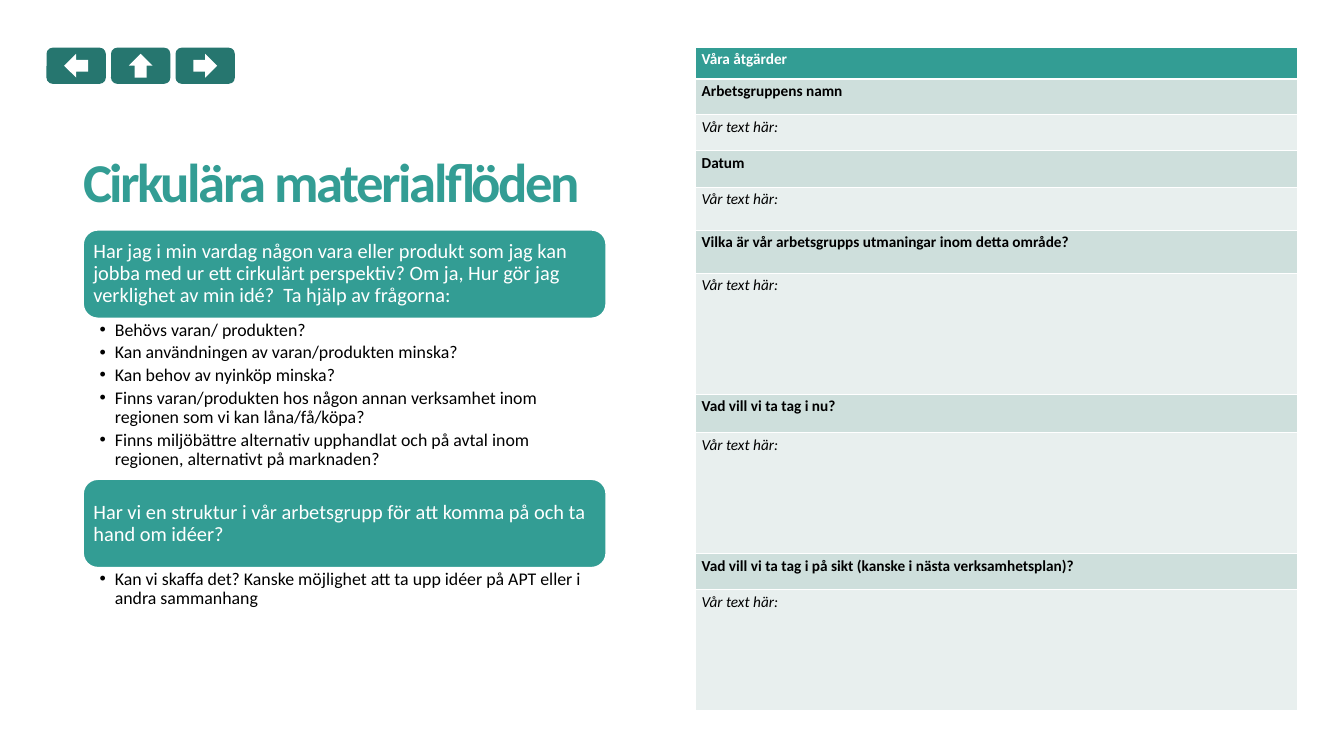
"""Builds the slide on circular material flows with its action table."""
from lxml import etree
from pptx import Presentation
from pptx.dml.color import RGBColor
from pptx.enum.shapes import MSO_SHAPE
from pptx.enum.text import MSO_ANCHOR, PP_ALIGN
from pptx.oxml.ns import qn
from pptx.util import Inches, Pt

ROUND, ARROW = MSO_SHAPE.ROUNDED_RECTANGLE, MSO_SHAPE.RIGHT_ARROW
MIDDLE, BOTTOM, LEFT = MSO_ANCHOR.MIDDLE, MSO_ANCHOR.BOTTOM, PP_ALIGN.LEFT
TEAL, DARK_TEAL = RGBColor(0x33, 0x9D, 0x94), RGBColor(0x26, 0x76, 0x6F)
HEADING, ANSWER = RGBColor(0xCE, 0xDF, 0xDC), RGBColor(0xE8, 0xEF, 0xEE)
WHITE, BLACK = RGBColor(0xFF, 0xFF, 0xFF), RGBColor(0, 0, 0)

prs = Presentation()
prs.slide_width, prs.slide_height = Inches(21.99), Inches(12.37)
s = prs.slides.add_slide(prs.slide_layouts[6])
COL, ROW = prs.slide_width / 100, prs.slide_height / 100


def add_shape(kind, x, y, w, h, fill):
    sp = s.shapes.add_shape(kind, int(x), int(y), int(w), int(h))
    sp.shadow.inherit = False
    sp.fill.solid()
    sp.fill.fore_color.rgb = fill
    sp.line.fill.background()
    return sp


def style(p, size, color, spacing=None, bold=False, italic=False):
    p.alignment, p.line_spacing = LEFT, spacing
    for r in p.runs:
        r.font.name, r.font.size, r.font.color.rgb = "Calibri", Pt(size), color
        r.font.bold, r.font.italic = bold, italic


left, width = int(6.18 * COL), int(38.93 * COL)

btn_w, btn_h, icon = 4.41 * COL, 4.77 * ROW, 1.77 * COL
for i, angle in enumerate((180, 270, 0)):
    x, y = (3.46 + 4.8 * i) * COL, 6.31 * ROW
    add_shape(ROUND, x, y, btn_w, btn_h, DARK_TEAL)
    arrow = add_shape(ARROW, x + (btn_w - icon) / 2, y + (btn_h - icon) / 2, icon, icon, WHITE)
    arrow.rotation = angle

title = s.shapes.add_textbox(left, int(10.83 * ROW), width, int(18.03 * ROW))
tf = title.text_frame
tf.word_wrap, tf.vertical_anchor = True, BOTTOM
tf.margin_left = tf.margin_top = tf.margin_right = 0
tf.margin_bottom = Inches(0.08)
tf.text = "Cirkulära materialflöden"
style(tf.paragraphs[0], 64.5, TEAL, 0.85, bold=True)
tf.paragraphs[0].runs[0].font._element.set("spc", "-280")

SECTIONS = [
    ("Har jag i min vardag någon vara eller produkt som jag kan jobba med ur ett cirkulärt "
     "perspektiv? Om ja, Hur gör jag verklighet av min idé?  Ta hjälp av frågorna:",
     ["Behövs varan/ produkten?",
      "Kan användningen av varan/produkten minska?",
      "Kan behov av nyinköp minska?",
      "Finns varan/produkten hos någon annan verksamhet inom regionen som vi kan låna/få/köpa?",
      "Finns miljöbättre alternativ upphandlat och på avtal inom regionen, alternativt på marknaden?"],
     21.26),
    ("Har vi en struktur i vår arbetsgrupp för att komma på och ta hand om idéer?",
     ["Kan vi skaffa det? Kanske möjlighet att ta upp idéer på APT eller i andra sammanhang"],
     5.82),
]
top, card_h = 30.4, 11.72
for question, bullets, list_h in SECTIONS:
    card = add_shape(ROUND, left, top * ROW, width, card_h * ROW, TEAL)
    card.line.color.rgb, card.line.width = WHITE, Pt(2)
    tf = card.text_frame
    tf.word_wrap, tf.vertical_anchor = True, MIDDLE
    tf.margin_left = tf.margin_top = tf.margin_right = tf.margin_bottom = Inches(0.1)
    tf.text = question
    style(tf.paragraphs[0], 24, WHITE, 0.9)
    top += card_h

    tf = s.shapes.add_textbox(left, int(top * ROW), width, int(list_h * ROW)).text_frame
    tf.word_wrap = True
    tf.margin_left, tf.margin_right = Inches(0.27), Inches(0.21)
    tf.margin_top = tf.margin_bottom = Inches(0.04)
    tf.text = "\n".join(bullets)
    for p in tf.paragraphs:
        pPr = p._p.get_or_add_pPr()
        pPr.set("marL", str(Inches(0.25)))
        pPr.set("indent", str(-Inches(0.25)))
        etree.SubElement(pPr, qn("a:buFont")).set("typeface", "Arial")
        etree.SubElement(pPr, qn("a:buChar")).set("char", "•")
        style(p, 21, BLACK, 0.9)
        p.space_after = Pt(4)
    top += list_h

PROMPT = "Vår text här:"
TABLE_ROWS = [
    ("Våra åtgärder", 4.2),
    ("Arbetsgruppens namn", 4.77), (PROMPT, 4.77),
    ("Datum", 4.77), (PROMPT, 5.74),
    ("Vilka är vår arbetsgrupps utmaningar inom detta område?", 5.66), (PROMPT, 16),
    ("Vad vill vi ta tag i nu?", 5.09), (PROMPT, 16),
    ("Vad vill vi ta tag i på sikt (kanske i nästa verksamhetsplan)?", 4.77), (PROMPT, 16),
]
table_h = sum(h for _, h in TABLE_ROWS)
table = s.shapes.add_table(len(TABLE_ROWS), 1, int(51.75 * COL), int(6.22 * ROW),
                           int(44.79 * COL), int(table_h * ROW)).table
for i, (text, h) in enumerate(TABLE_ROWS):
    table.rows[i].height = int(h * ROW)
    cell = table.cell(i, 0)
    cell.text = text
    answer = text == PROMPT
    style(cell.text_frame.paragraphs[0], 18, BLACK if i else WHITE, bold=not answer, italic=answer)
    tcPr = cell._tc.get_or_add_tcPr()
    for side in ("lnL", "lnR", "lnT", "lnB"):
        thick = (i, side) in ((0, "lnB"), (1, "lnT"))
        ln = etree.SubElement(tcPr, qn("a:" + side), w=str(Pt(3 if thick else 1)))
        solid = etree.SubElement(ln, qn("a:solidFill"))
        etree.SubElement(solid, qn("a:srgbClr"), val=str(WHITE))
    cell.fill.solid()
    cell.fill.fore_color.rgb = ANSWER if answer else HEADING if i else TEAL

prs.save("out.pptx")
